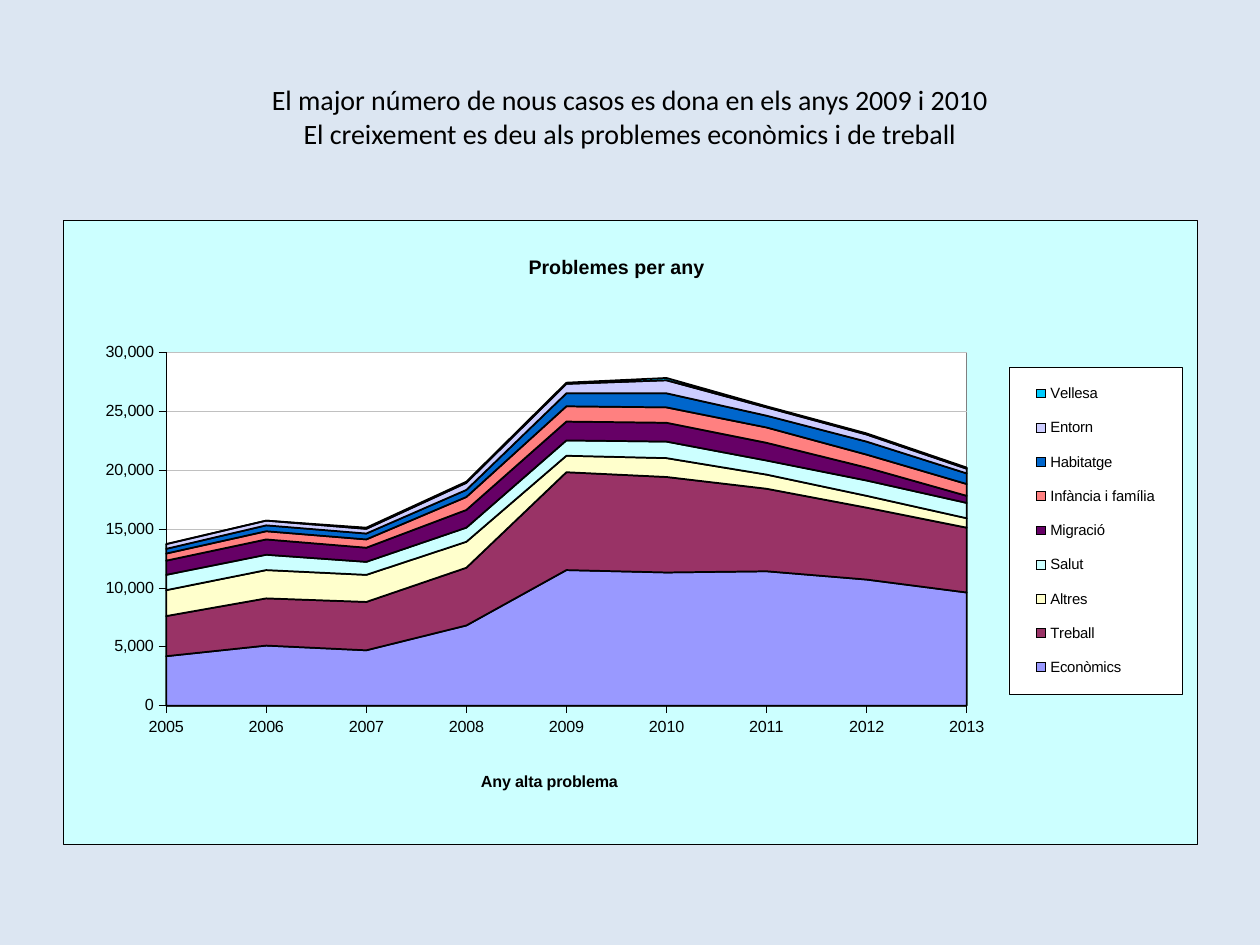
from lxml.etree import SubElement
from pptx import Presentation
from pptx.chart.data import CategoryChartData
from pptx.dml.color import RGBColor
from pptx.enum.chart import XL_CHART_TYPE as ChartType
from pptx.enum.chart import XL_LEGEND_POSITION as LegendPos
from pptx.enum.chart import XL_TICK_MARK as Tick
from pptx.enum.text import MSO_ANCHOR as Anchor
from pptx.enum.text import PP_ALIGN as Align
from pptx.oxml import parse_xml
from pptx.oxml.ns import nsdecls, qn
from pptx.util import Emu, Pt

PX = 914400 // 126
COLORS = {
    "background": "DCE6F2", "text": "000000", "line": "000000",
    "chart": "CCFFFF", "plot": "FFFFFF", "plot border": "808080",
    "legend": "FFFFFF", "grid": "C0C0C0",
    "Econòmics": "9999FF", "Treball": "993366", "Altres": "FFFFCC",
    "Salut": "CCFFFF", "Migració": "660066", "Infància i família": "FF8080",
    "Habitatge": "0066CC", "Entorn": "CCCCFF", "Vellesa": "00CCFF",
}
TITLE_LINES = [
    "El major número de nous casos es dona en els anys 2009 i 2010",
    "El creixement es deu als problemes econòmics i de treball",
]
YEARS = [str(year) for year in range(2005, 2014)]
PROBLEMS = {
    "Econòmics": (4200, 5100, 4700, 6800, 11500, 11300, 11400, 10700, 9600),
    "Treball": (3400, 4000, 4100, 4900, 8300, 8100, 7000, 6100, 5500),
    "Altres": (2200, 2400, 2300, 2200, 1400, 1600, 1200, 1000, 800),
    "Salut": (1300, 1300, 1100, 1200, 1300, 1400, 1200, 1300, 1300),
    "Migració": (1200, 1300, 1200, 1500, 1600, 1600, 1500, 1100, 600),
    "Infància i família": (600, 700, 700, 1100, 1300, 1300, 1300, 1100, 1000),
    "Habitatge": (400, 500, 500, 600, 1100, 1200, 1000, 1100, 900),
    "Entorn": (400, 400, 400, 600, 800, 1100, 700, 600, 400),
    "Vellesa": (0, 0, 100, 100, 100, 200, 100, 100, 100),
}
CHART_LEFT, CHART_TOP, CHART_W, CHART_H = 63, 220, 1134, 624


def px(*lengths):
    return [Emu(n * PX) for n in lengths]


def rgb(name):
    return RGBColor.from_string(COLORS[name])


def style_font(font, size, name="Arial", bold=False):
    font.size, font.name, font.bold = Pt(size), name, bold
    font.color.rgb = rgb("text")


def style_line(line, color, width):
    line.color.rgb = rgb(color)
    line.width = Pt(width)


def area_props(fill, line):
    """Fill and hairline for chart parts without a public format object."""
    return parse_xml(
        f'<c:spPr {nsdecls("c", "a")}>'
        f'<a:solidFill><a:srgbClr val="{COLORS[fill]}"/></a:solidFill>'
        f'<a:ln w="3175"><a:solidFill><a:srgbClr val="{COLORS[line]}"/>'
        '</a:solidFill></a:ln></c:spPr>')


def place(part, left, top, width=None, height=None, inner=False):
    """Give a chart part a manual layout, in slide px."""
    old = part.find(qn("c:layout"))
    if old is not None:
        part.remove(old)
    layout = parse_xml(f'<c:layout {nsdecls("c")}><c:manualLayout/></c:layout>')
    settings = [("layoutTarget", "inner")] if inner else []
    settings += [("xMode", "edge"), ("yMode", "edge"),
                 ("x", round((left - CHART_LEFT) / CHART_W, 4)),
                 ("y", round((top - CHART_TOP) / CHART_H, 4))]
    if width:
        settings += [("w", round(width / CHART_W, 4)),
                     ("h", round(height / CHART_H, 4))]
    for tag, value in settings:
        SubElement(layout[0], qn(f"c:{tag}")).set("val", str(value))
    overlay = part.find(qn("c:overlay"))
    if overlay is None:
        part.insert(0, layout)
    else:
        overlay.addprevious(layout)


def add_title(slide):
    title = slide.shapes.title
    title.left, title.top, title.width, title.height = px(63, 38, 1134, 157)
    tf = title.text_frame
    tf.word_wrap = True
    tf.vertical_anchor = Anchor.MIDDLE
    p = tf.paragraphs[0]
    p.alignment = Align.CENTER
    for i, text in enumerate(TITLE_LINES):
        if i:
            p.add_line_break()
        r = p.add_run()
        r.text = text
        style_font(r.font, 16, "Calibri")


def set_chart_text(owner, text, size, left, top):
    """Write and place the title of a chart or an axis."""
    title = owner.chart_title if hasattr(owner, "chart_title") else owner.axis_title
    r = title.text_frame.paragraphs[0].add_run()
    r.text = text
    style_font(r.font, size, bold=True)
    place(title._element, left, top)


def style_axis(axis):
    axis.major_tick_mark, axis.minor_tick_mark = Tick.OUTSIDE, Tick.NONE
    style_font(axis.tick_labels.font, 9.2)
    style_line(axis.format.line, "line", 0.25)


def style_axes(chart):
    years, cases = chart.category_axis, chart.value_axis
    style_axis(years)
    style_axis(cases)
    years.has_major_gridlines = False
    set_chart_text(years, "Any alta problema", 9.2, 478, 768)
    cases.minimum_scale, cases.maximum_scale, cases.major_unit = 0, 30000, 5000
    cases.tick_labels.number_format = "#,##0"
    cases.tick_labels.number_format_is_linked = False
    cases.has_major_gridlines = True
    style_line(cases.major_gridlines.format.line, "grid", 0.25)


def add_legend(chart):
    chart.has_legend = True
    legend = chart.legend
    legend.position = LegendPos.RIGHT
    legend.include_in_layout = False
    style_font(legend.font, 8.5)
    place(legend._element, 1009, 367, 174, 327)
    legend._element.find(qn("c:txPr")).addprevious(area_props("legend", "line"))


def add_area_chart(slide):
    data = CategoryChartData(number_format="#,##0")
    data.categories = YEARS
    for name, values in PROBLEMS.items():
        data.add_series(name, values)
    chart = slide.shapes.add_chart(
        ChartType.AREA_STACKED,
        *px(CHART_LEFT, CHART_TOP, CHART_W, CHART_H), data).chart
    style_font(chart.font, 9.2)
    chart.has_title = True
    set_chart_text(chart, "Problemes per any", 11.2, 525, 250)
    style_axes(chart)
    add_legend(chart)

    plot = chart.plots[0]
    plot.vary_by_categories = False
    for series in plot.series:
        series.format.fill.solid()
        series.format.fill.fore_color.rgb = rgb(series.name)
        style_line(series.format.line, "line", 1)

    chart_el = chart._chartSpace.find(qn("c:chart"))
    chart_el.addnext(area_props("chart", "line"))
    plot_area = chart_el.find(qn("c:plotArea"))
    place(plot_area, 166, 352, 801, 354, inner=True)
    plot_area.append(area_props("plot", "plot border"))


def main():
    prs = Presentation()
    prs.slide_width, prs.slide_height = px(1260, 945)
    slide = prs.slides.add_slide(prs.slide_layouts[5])
    slide.background.fill.solid()
    slide.background.fill.fore_color.rgb = rgb("background")
    add_title(slide)
    add_area_chart(slide)
    prs.save("out.pptx")


if __name__ == "__main__":
    main()
